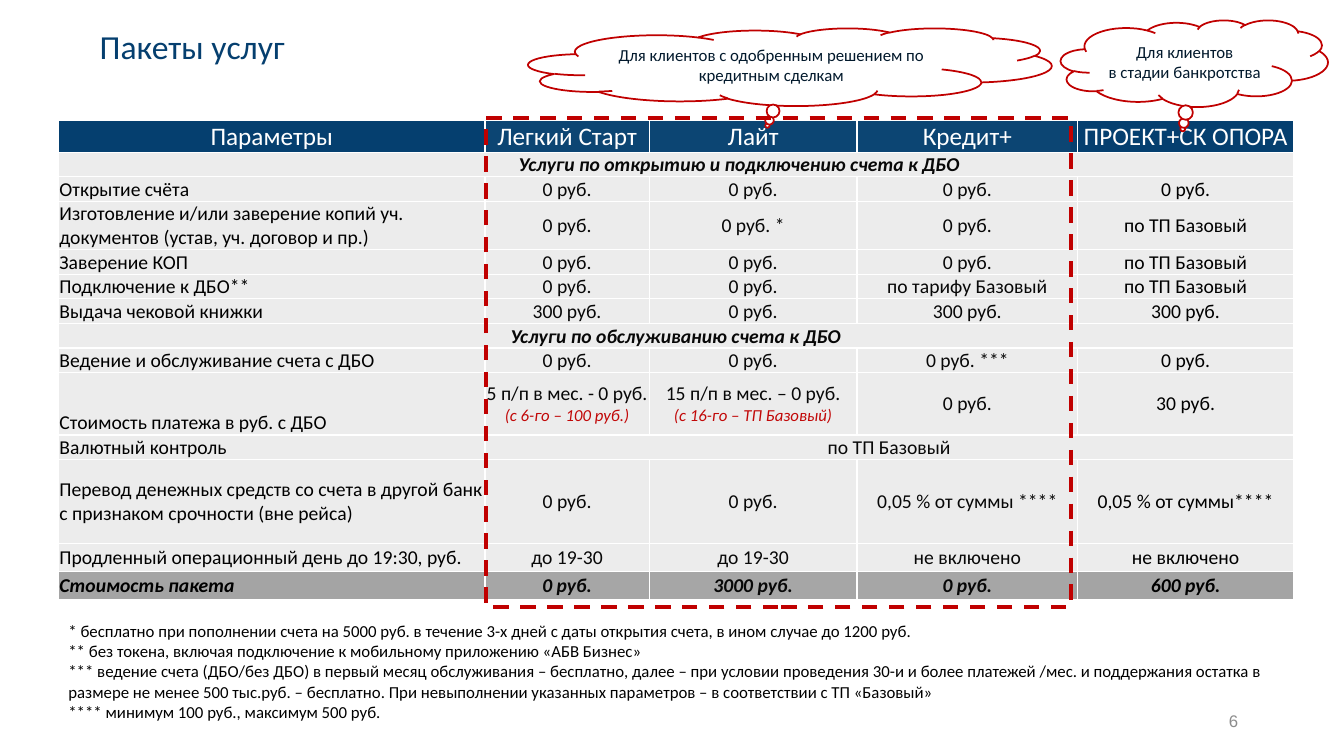
from lxml.etree import SubElement
from pptx import Presentation
from pptx.dml.color import RGBColor
from pptx.enum.dml import MSO_LINE
from pptx.enum.shapes import MSO_SHAPE
from pptx.enum.text import MSO_ANCHOR, PP_ALIGN
from pptx.oxml.ns import qn
from pptx.util import Emu, Pt

NAVY, RED, LIGHT, GREY = "053F6F", "C00000", "ECECEC", "A4A4A4"
WHITE, BLACK, INK = "FFFFFF", "000000", "02192C"
COLUMNS = [423, 163, 206, 219, 214]
ROWS = [
    (32, ["Параметры", "Легкий Старт", "Лайт", "Кредит+", "ПРОЕКТ+СК ОПОРА"]),
    (24, ["Услуги по открытию и подключению счета к ДБО"]),
    (24, ["Открытие счёта"] + ["0 руб."] * 4),
    (48, ["Изготовление и/или заверение копий уч. документов (устав, уч. договор и пр.)",
          "0 руб.", "0 руб. *", "0 руб.", "по ТП Базовый"]),
    (24, ["Заверение КОП", "0 руб.", "0 руб.", "0 руб.", "по ТП Базовый"]),
    (24, ["Подключение к ДБО**", "0 руб.", "0 руб.", "по тарифу Базовый", "по ТП Базовый"]),
    (24, ["Выдача чековой книжки", "300 руб.", "0 руб.", "300 руб.", "300 руб."]),
    (24, ["Услуги по обслуживанию счета к ДБО"]),
    (24, ["Ведение и обслуживание счета с ДБО", "0 руб.", "0 руб.", "0 руб. ***", "0 руб."]),
    (62, ["Стоимость платежа в руб. с ДБО", "5 п/п в мес. - 0 руб.\n(с 6-го – 100 руб.)",
          "15 п/п в мес. – 0 руб.\n(с 16-го – ТП Базовый)", "0 руб.", "30 руб."]),
    (24, ["Валютный контроль", "по ТП Базовый"]),
    (83, ["Перевод денежных средств со счета в другой банк с признаком срочности (вне рейса)",
          "0 руб.", "0 руб.", "0,05 % от суммы ****", "0,05 % от суммы****"]),
    (28, ["Продленный операционный день до 19:30, руб.",
          "до 19-30", "до 19-30", "не включено", "не включено"]),
    (28, ["Стоимость пакета", "0 руб.", "3000 руб.", "0 руб.", "600 руб."]),
]
FOOTNOTES = [
    "* бесплатно при пополнении счета на 5000 руб. в течение 3-х дней с даты открытия счета, "
    "в ином случае до 1200 руб.",
    "** без токена, включая подключение к мобильному приложению «АБВ Бизнес»",
    "*** ведение счета (ДБО/без ДБО) в первый месяц обслуживания – бесплатно, далее – при условии "
    "проведения 30-и и более платежей /мес. и поддержания остатка в размере не менее 500 тыс.руб. – "
    "бесплатно. При невыполнении указанных параметров – в соответствии с ТП «Базовый»",
    "**** минимум 100 руб., максимум 500 руб.",
]


def px(n):
    """Turn px, a hundred to the inch, into EMU."""
    return Emu(n * 9144)


def rgb(value):
    """Turn a hex string into a colour."""
    return RGBColor.from_string(value)


def add_paragraph(tf, first, text, size, color, align=PP_ALIGN.LEFT, bold=False,
                  italic=False, font="Calibri"):
    """Write one paragraph with one run."""
    p = tf.paragraphs[0] if first else tf.add_paragraph()
    p.alignment = align
    r = p.add_run()
    r.text = text
    r.font.name, r.font.size = font, Pt(size)
    r.font.bold, r.font.italic = bold, italic
    r.font.color.rgb = rgb(color)
    return p


def add_text(s, box, lines, size, color, anchor=MSO_ANCHOR.MIDDLE, **style):
    """Add a text box with one paragraph per line."""
    tf = s.shapes.add_textbox(*map(px, box)).text_frame
    tf.word_wrap, tf.vertical_anchor = True, anchor
    return [add_paragraph(tf, i == 0, line, size, color, **style)
            for i, line in enumerate(lines)]


def add_outlined(s, kind, box, width):
    """Add a white shape with a red outline."""
    sp = s.shapes.add_shape(kind, *map(px, box))
    sp.shadow.inherit = False
    sp.fill.solid()
    sp.fill.fore_color.rgb = rgb(WHITE)
    sp.line.color.rgb = rgb(RED)
    sp.line.width = Pt(width)
    return sp


def add_cloud(s, box, lines):
    """Add a cloud callout pointing down at the table."""
    sp = add_outlined(s, MSO_SHAPE.CLOUD_CALLOUT, box, 1.25)
    sp.adjustments[0], sp.adjustments[1] = -0.043, 0.755
    tf = sp.text_frame
    tf.word_wrap, tf.vertical_anchor = True, MSO_ANCHOR.MIDDLE
    for i, line in enumerate(lines):
        add_paragraph(tf, i == 0, line, 12, INK, PP_ALIGN.CENTER)


def add_frame(s, box):
    """Add the dashed, almost clear frame around the packages."""
    sp = add_outlined(s, MSO_SHAPE.RECTANGLE, box, 2.75)
    sp.line.dash_style = MSO_LINE.DASH
    color = sp.fill._xPr.find(qn("a:solidFill"))[0]
    SubElement(color, qn("a:alpha"), val="3000")


def style_cell(cell, fill):
    """Set the margins, white borders and fill of a cell."""
    cell.margin_left = cell.margin_right = cell.margin_top = px(1)
    cell.margin_bottom = 0
    cell.vertical_anchor = MSO_ANCHOR.MIDDLE
    tcPr = cell._tc.get_or_add_tcPr()
    for side in ("lnL", "lnR", "lnT", "lnB"):
        ln = SubElement(tcPr, qn(f"a:{side}"), w=str(Pt(1)))
        SubElement(SubElement(ln, qn("a:solidFill")), qn("a:srgbClr"), val=WHITE)
    cell.fill.solid()
    cell.fill.fore_color.rgb = rgb(fill)


def write_cell(cell, text, size, color, align, strong):
    """Write the value of a cell, with any further line as a red note."""
    for i, line in enumerate(text.split("\n")):
        if i:
            add_paragraph(cell.text_frame, False, line, 12, RED, align, italic=True)
        else:
            add_paragraph(cell.text_frame, True, line, size, color, align, strong, strong)


def add_tariffs(s, left, top):
    """Add the table of packages."""
    height = sum(h for h, _ in ROWS)
    table = s.shapes.add_table(len(ROWS), len(COLUMNS),
                               *map(px, (left, top, sum(COLUMNS), height))).table
    table.first_row = table.horz_banding = False
    for column, width in zip(table.columns, COLUMNS):
        column.width = px(width)
    last = len(ROWS) - 1
    for i, (h, texts) in enumerate(ROWS):
        table.rows[i].height = px(h)
        header, section = i == 0, len(texts) == 1
        fill = NAVY if header else GREY if i == last else LIGHT
        for j in range(len(COLUMNS)):
            style_cell(table.cell(i, j), fill)
        if len(texts) < len(COLUMNS):
            table.cell(i, len(texts) - 1).merge(table.cell(i, len(COLUMNS) - 1))
        for j, text in enumerate(texts):
            label = j == 0 and not header and not section
            write_cell(table.cell(i, j), text, 18 if header else 14, WHITE if header else BLACK,
                       PP_ALIGN.LEFT if label else PP_ALIGN.CENTER, section or i == last)
    table.cell(1, 0).margin_left = px(127)
    table.cell(9, 0).vertical_anchor = MSO_ANCHOR.BOTTOM


def main():
    """Build the slide and save it."""
    prs = Presentation()
    prs.slide_width, prs.slide_height = px(1333), px(750)
    s = prs.slides.add_slide(prs.slide_layouts[6])
    add_text(s, (942, 695, 296, 40), ["6"], 12, "8C8C8C", align=PP_ALIGN.RIGHT, font="Arial")
    title = add_text(s, (89, 28, 932, 40), ["Пакеты услуг"], 24, NAVY)[0]
    title.line_spacing = 0.9
    add_tariffs(s, 58, 119)
    add_text(s, (58, 611, 1225, 111), FOOTNOTES, 12, BLACK, MSO_ANCHOR.TOP)
    add_cloud(s, (524, 28, 519, 77), ["Для клиентов с одобренным решением по кредитным сделкам"])
    add_frame(s, (482, 117, 580, 485))
    add_cloud(s, (1052, 20, 265, 86), ["Для клиентов", "в стадии банкротства"])
    prs.save("out.pptx")


if __name__ == "__main__":
    main()
